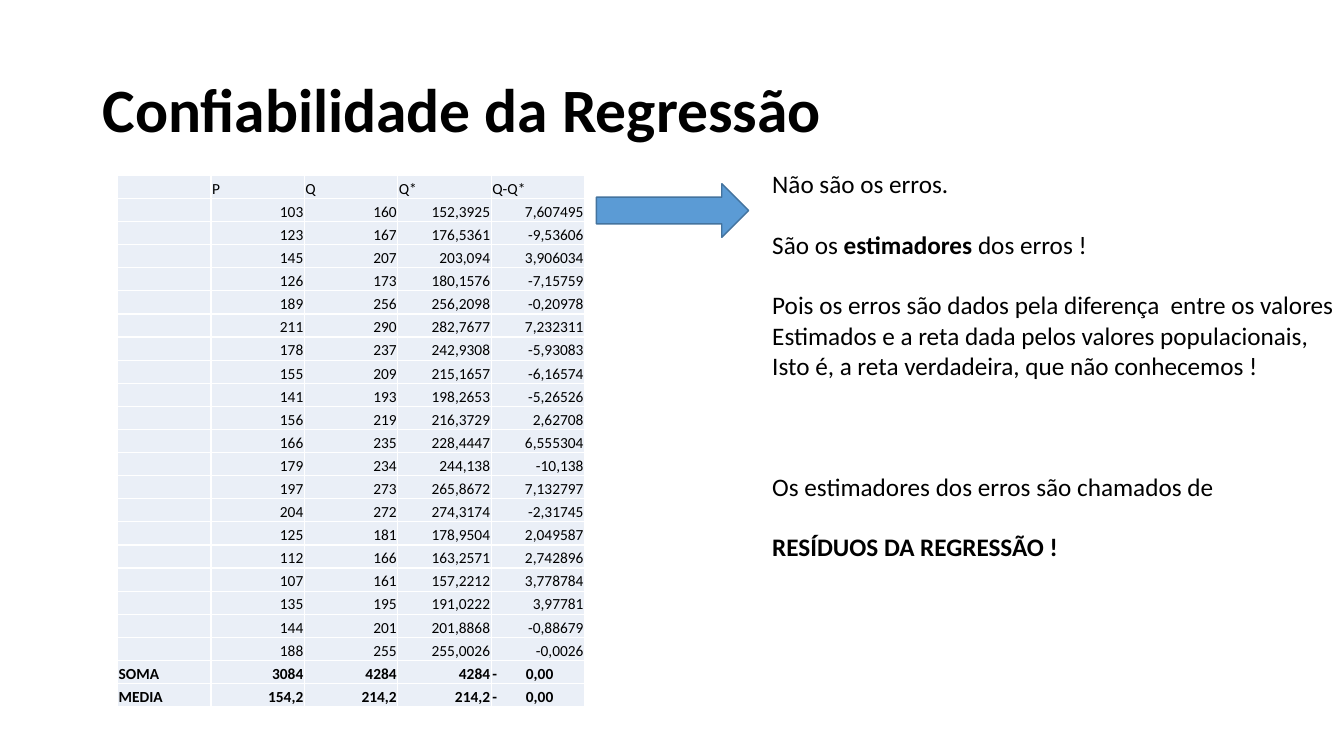
from lxml import etree
from pptx import Presentation
from pptx.dml.color import RGBColor
from pptx.enum.shapes import MSO_SHAPE
from pptx.enum.text import MSO_ANCHOR, PP_ALIGN
from pptx.oxml.ns import qn
from pptx.util import Pt

PX = 9525
FONT = "Calibri"
LEFT, RIGHT = PP_ALIGN.LEFT, PP_ALIGN.RIGHT
MIDDLE, BOTTOM = MSO_ANCHOR.MIDDLE, MSO_ANCHOR.BOTTOM
RIGHT_ARROW = MSO_SHAPE.RIGHT_ARROW

BLACK = RGBColor(0x00, 0x00, 0x00)
WHITE = RGBColor(0xFF, 0xFF, 0xFF)
CELL_BLUE = RGBColor(0xEA, 0xEF, 0xF7)
ARROW_BLUE = RGBColor(0x5B, 0x9B, 0xD5)
ARROW_EDGE = RGBColor(0x43, 0x73, 0x9E)

COLUMN_WIDTH, ROW_HEIGHT = 89, 22
CELL_SIZE, NOTE_SIZE, TITLE_SIZE = 11, 18, 44
NOTE_LINE = 21.6
TOTAL_TAB = 32

HEADINGS = ["", "P", "Q", "Q*", "Q-Q*"]
OBSERVATIONS = [
    ("103", "160", "152,3925", "7,607495"),
    ("123", "167", "176,5361", "-9,53606"),
    ("145", "207", "203,094", "3,906034"),
    ("126", "173", "180,1576", "-7,15759"),
    ("189", "256", "256,2098", "-0,20978"),
    ("211", "290", "282,7677", "7,232311"),
    ("178", "237", "242,9308", "-5,93083"),
    ("155", "209", "215,1657", "-6,16574"),
    ("141", "193", "198,2653", "-5,26526"),
    ("156", "219", "216,3729", "2,62708"),
    ("166", "235", "228,4447", "6,555304"),
    ("179", "234", "244,138", "-10,138"),
    ("197", "273", "265,8672", "7,132797"),
    ("204", "272", "274,3174", "-2,31745"),
    ("125", "181", "178,9504", "2,049587"),
    ("112", "166", "163,2571", "2,742896"),
    ("107", "161", "157,2212", "3,778784"),
    ("135", "195", "191,0222", "3,97781"),
    ("144", "201", "201,8868", "-0,88679"),
    ("188", "255", "255,0026", "-0,0026"),
]
TOTALS = [
    ("SOMA", "3084", "4284", "4284", "-\t0,00"),
    ("MEDIA", "154,2", "214,2", "214,2", "-\t0,00"),
]

NOTES = [
    (0, [("Não são os erros.", False)]),
    (1, [("São os ", False), ("estimadores ", True), ("dos erros !", False)]),
    (1, [("Pois os erros são dados pela diferença  entre os valores", False)]),
    (0, [("Estimados e a reta dada pelos valores populacionais,", False)]),
    (0, [("Isto é, a reta verdadeira, que não conhecemos !", False)]),
    (3, [("Os estimadores dos erros são chamados de", False)]),
    (1, [("RESÍDUOS DA REGRESSÃO !", True)]),
]


def px(*lengths):
    return [length * PX for length in lengths]


def format_run(run, size, bold=False):
    run.font.name = FONT
    run.font.size = Pt(size)
    run.font.bold = bold
    run.font.color.rgb = BLACK


def set_title(slide, text, box):
    title = slide.shapes.title
    title.left, title.top, title.width, title.height = px(*box)
    title.text_frame.text = text
    title.text_frame.vertical_anchor = MIDDLE
    heading = title.text_frame.paragraphs[0]
    heading.alignment = LEFT
    heading.line_spacing = 0.9
    format_run(heading.runs[0], TITLE_SIZE, True)


def set_borders(cell):
    properties = cell._tc.get_or_add_tcPr()
    for side in ("a:lnL", "a:lnR", "a:lnT", "a:lnB"):
        border = etree.SubElement(properties, qn(side), w=str(Pt(1)))
        fill = etree.SubElement(border, qn("a:solidFill"))
        etree.SubElement(fill, qn("a:srgbClr"), val=str(WHITE))


def add_tab_stop(paragraph, position):
    stops = etree.SubElement(paragraph._p.get_or_add_pPr(), qn("a:tabLst"))
    etree.SubElement(stops, qn("a:tab"), pos=str(position * PX), algn="l")


def fill_cell(cell, text, alignment, bold):
    set_borders(cell)
    cell.fill.solid()
    cell.fill.fore_color.rgb = CELL_BLUE
    cell.margin_left, cell.margin_right, cell.margin_top, cell.margin_bottom = px(1, 1, 1, 0)
    cell.vertical_anchor = BOTTOM
    cell.text_frame.text = text
    value = cell.text_frame.paragraphs[0]
    value.alignment = alignment
    if "\t" in text:
        add_tab_stop(value, TOTAL_TAB)
    for run in value.runs:
        format_run(run, CELL_SIZE, bold)
    if not text:
        etree.SubElement(value._p, qn("a:endParaRPr"), sz=str(CELL_SIZE * 100))


def add_regression_table(slide, left, top):
    rows = [HEADINGS] + [("", *values) for values in OBSERVATIONS] + TOTALS
    size = px(COLUMN_WIDTH * len(HEADINGS), ROW_HEIGHT * len(rows))
    table = slide.shapes.add_table(len(rows), len(HEADINGS), *px(left, top), *size).table
    table.first_row = False
    table.horz_banding = False
    for column in table.columns:
        column.width = COLUMN_WIDTH * PX
    for r, values in enumerate(rows):
        table.rows[r].height = ROW_HEIGHT * PX
        for c, text in enumerate(values):
            left_aligned = r == 0 or c == 0 or "\t" in text
            fill_cell(table.cell(r, c), text, LEFT if left_aligned else RIGHT, values in TOTALS)


def add_arrow(slide, box):
    arrow = slide.shapes.add_shape(RIGHT_ARROW, *px(*box))
    arrow.shadow.inherit = False
    arrow.fill.solid()
    arrow.fill.fore_color.rgb = ARROW_BLUE
    arrow.line.color.rgb = ARROW_EDGE
    arrow.line.width = Pt(1)


def add_notes(slide, box):
    frame = slide.shapes.add_textbox(*px(*box)).text_frame
    frame.word_wrap = False
    for i, (gap_lines, pieces) in enumerate(NOTES):
        note = frame.add_paragraph() if i else frame.paragraphs[0]
        note.space_before = Pt(gap_lines * NOTE_LINE)
        for text, bold in pieces:
            run = note.add_run()
            run.text = text
            format_run(run, NOTE_SIZE, bold)


def main():
    presentation = Presentation()
    presentation.slide_width, presentation.slide_height = px(1280, 720)
    slide = presentation.slides.add_slide(presentation.slide_layouts[5])
    set_title(slide, "Confiabilidade da Regressão", (88, 38, 1104, 139))
    add_regression_table(slide, 112, 167)
    add_arrow(slide, (568, 175, 145, 51))
    add_notes(slide, (726, 156, 565, 417))
    presentation.save("out.pptx")


if __name__ == "__main__":
    main()
